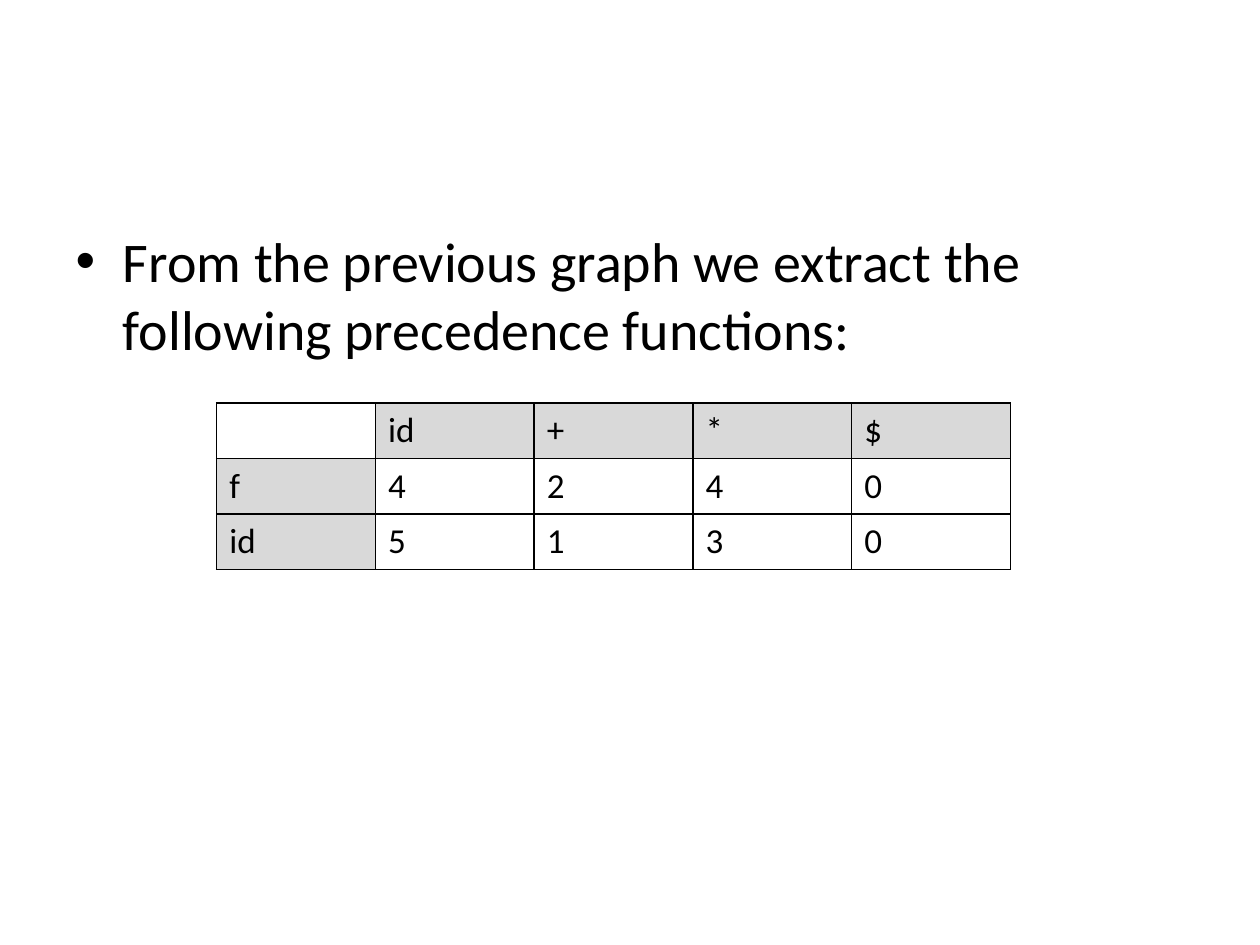
import dataclasses

import pptx
import pptx.dml.color
import pptx.oxml
import pptx.oxml.ns
import pptx.util

GRID_COLUMNS, GRID_ROWS = 100, 75
TITLE_AND_CONTENT = 1

STATEMENT = "From the previous graph we extract the following precedence functions:"
PRECEDENCE = [
    ["", "id", "+", "*", "$"],
    ["f", "4", "2", "4", "0"],
    ["id", "5", "1", "3", "0"],
]


@dataclasses.dataclass(frozen=True)
class Theme:
    font: str = "Calibri"
    ink: str = "000000"
    paper: str = "FFFFFF"
    header: str = "D9D9D9"
    body_size: int = 32
    table_size: int = 20
    border: int = 1


class SlideBuilder:
    def __init__(self, deck, theme):
        self.theme = theme
        self.slide = deck.slides.add_slide(deck.slide_layouts[TITLE_AND_CONTENT])
        self.column = deck.slide_width / GRID_COLUMNS
        self.row = deck.slide_height / GRID_ROWS
        background = self.slide.background.fill
        background.solid()
        background.fore_color.rgb = self.color(theme.paper)
        heading = self.slide.shapes.title.element
        heading.getparent().remove(heading)

    def color(self, code):
        return pptx.dml.color.RGBColor.from_string(code)

    def area(self, left, top, width, height):
        """Turn grid columns and rows into lengths."""
        return (round(left * self.column), round(top * self.row),
                round(width * self.column), round(height * self.row))

    def add_text(self, paragraph, text, size):
        run = paragraph.add_run()
        run.text = text
        run.font.name = self.theme.font
        run.font.size = pptx.util.Pt(size)
        run.font.color.rgb = self.color(self.theme.ink)

    def bullet(self, text, *place):
        body = self.slide.placeholders[1]
        body.left, body.top, body.width, body.height = self.area(*place)
        self.add_text(body.text_frame.paragraphs[0], text, self.theme.body_size)

    def outline(self, cell):
        properties = cell._tc.get_or_add_tcPr()
        width = pptx.util.Pt(self.theme.border)
        for position, side in enumerate(("lnL", "lnR", "lnT", "lnB")):
            properties.insert(position, pptx.oxml.parse_xml(
                f'<a:{side} {pptx.oxml.ns.nsdecls("a")} w="{width}"><a:solidFill>'
                f'<a:srgbClr val="{self.theme.ink}"/></a:solidFill></a:{side}>'))

    def table(self, values, left, top, column_width, row_height):
        rows, columns = len(values), len(values[0])
        place = self.area(left, top, columns * column_width, rows * row_height)
        grid = self.slide.shapes.add_table(rows, columns, *place).table
        for r, line in enumerate(values):
            for c, value in enumerate(line):
                cell = grid.cell(r, c)
                is_header = (r == 0) != (c == 0)
                cell.fill.solid()
                cell.fill.fore_color.rgb = self.color(
                    self.theme.header if is_header else self.theme.paper)
                self.outline(cell)
                if value:
                    self.add_text(cell.text_frame.paragraphs[0], value, self.theme.table_size)


def main():
    deck = pptx.Presentation()
    deck.slide_width = pptx.util.Inches(10)
    deck.slide_height = pptx.util.Inches(7.5)
    builder = SlideBuilder(deck, Theme())
    builder.bullet(STATEMENT, 5, 17.5, 90, 49.5)
    builder.table(PRECEDENCE, 17.2, 32, 12.6, 4.4)
    deck.save("out.pptx")


if __name__ == "__main__":
    main()
